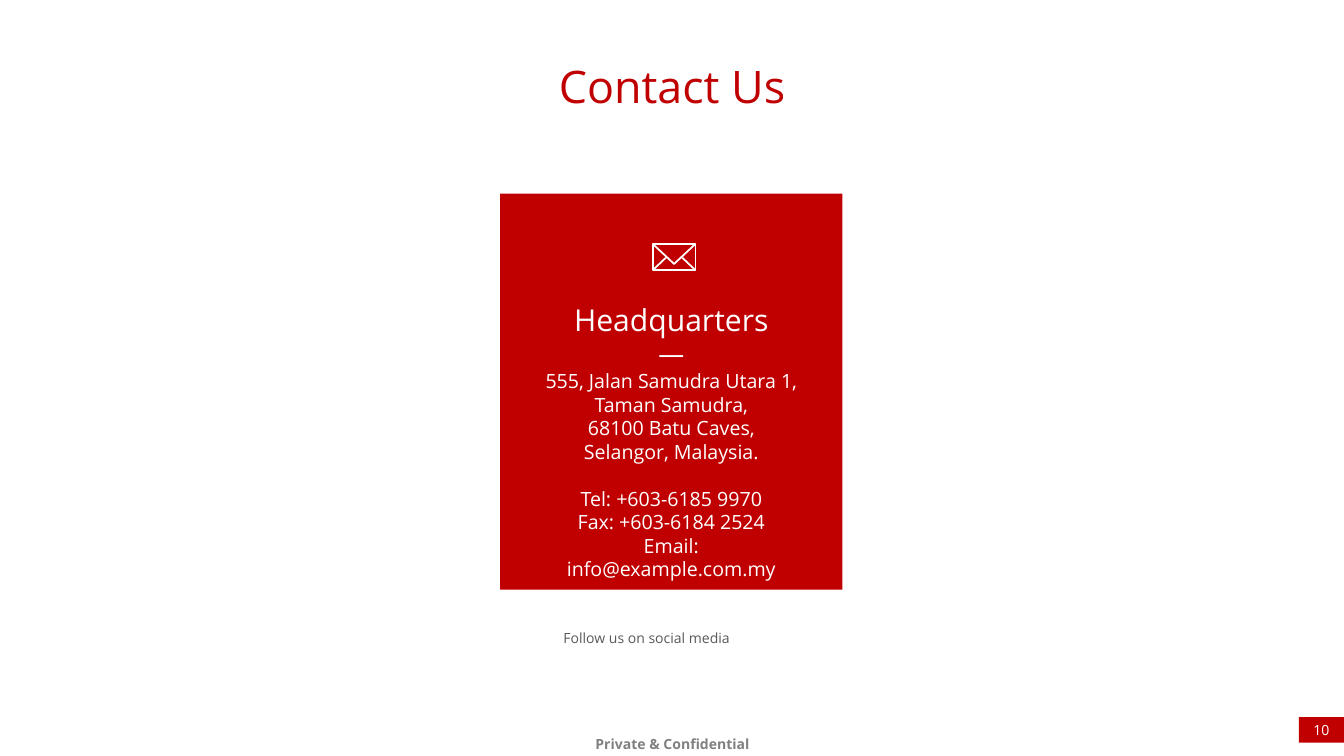
import dataclasses
import pptx
import pptx.util
import pptx.dml.color
import pptx.enum.shapes
import pptx.enum.text
import pptx.oxml.ns
import lxml.etree

Pt = pptx.util.Pt
Color = pptx.dml.color.RGBColor.from_string
Align = pptx.enum.text.PP_ALIGN
Anchor = pptx.enum.text.MSO_ANCHOR
Shape = pptx.enum.shapes.MSO_SHAPE


@dataclasses.dataclass(frozen=True)
class Theme:
    font: str = "Open Sans"
    red: str = "C00000"
    white: str = "FFFFFF"
    dark: str = "595959"
    gray: str = "808080"
    title: int = 64
    head: int = 43
    dash: int = 37
    body: int = 28
    small: int = 20
    stroke: float = 2.5


THEME = Theme()
ADDRESS = [
    "555, Jalan Samudra Utara 1,",
    "Taman Samudra,",
    "68100 Batu Caves,",
    "Selangor, Malaysia.",
]
CONTACT = [
    "Tel: +603-6185 9970",
    "Fax: +603-6184 2524",
    "Email: info@example.com.my",
]


def place(shape, box):
    shape.left, shape.top, shape.width, shape.height = map(Pt, box)


def write(shape, lines, color, inset=(0, 0), align=Align.CENTER, anchor=Anchor.TOP):
    """Fill a shape with (text, size) lines and return its paragraphs."""
    frame = shape.text_frame
    frame.word_wrap = True
    frame.auto_size = pptx.enum.text.MSO_AUTO_SIZE.NONE
    frame.vertical_anchor = anchor
    frame.margin_left = frame.margin_right = Pt(inset[0])
    frame.margin_top = frame.margin_bottom = Pt(inset[1])
    frame.text = "\n".join(text for text, size in lines)
    for para, (text, size) in zip(frame.paragraphs, lines):
        para.alignment = align
        para.font.name = THEME.font
        para.font.size = Pt(size)
        para.font.color.rgb = Color(color)
    return frame.paragraphs


def add_text(slide, box, lines, color, inset, align=Align.CENTER):
    shape = slide.shapes.add_textbox(*map(Pt, box))
    return write(shape, lines, color, inset, align)


def add_block(slide, box):
    shape = slide.shapes.add_shape(Shape.RECTANGLE, *map(Pt, box))
    shape.shadow.inherit = False
    shape.fill.solid()
    shape.fill.fore_color.rgb = Color(THEME.red)
    shape.line.fill.background()
    return shape


def add_title(slide, box):
    title = slide.shapes.title
    place(title, box)
    write(title, [("Contact Us", THEME.title)], THEME.red, (19, 9.5))


def outline(shape):
    shape.line.color.rgb = Color(THEME.white)
    shape.line.width = Pt(THEME.stroke)


def add_envelope(slide, box):
    left, top, width, height = box
    right, base, mid = left + width, top + height, left + width / 2
    frame = slide.shapes.add_shape(Shape.RECTANGLE, *map(Pt, box))
    pen = slide.shapes.build_freeform(Pt(left), Pt(top))
    pen.add_line_segments(
        [(Pt(mid), Pt(top + 0.76 * height)), (Pt(right), Pt(top))], close=False)
    for shape in (frame, pen.convert_to_shape()):
        shape.shadow.inherit = False
        shape.fill.background()
        outline(shape)
    for start, end in ((left, left + 0.31 * width), (right, right - 0.31 * width)):
        fold = slide.shapes.add_connector(
            pptx.enum.shapes.MSO_CONNECTOR.STRAIGHT,
            Pt(start), Pt(base), Pt(end), Pt(top + 0.52 * height))
        outline(fold)
        lxml.etree.SubElement(
            fold._element.spPr, pptx.oxml.ns.qn("a:effectLst"))


def add_card(slide, box):
    left, top, width, height = box
    add_block(slide, box)
    lines = [("Headquarters", THEME.head), ("—", THEME.dash)]
    lines += [(text, THEME.body) for text in ADDRESS + CONTACT]
    paras = add_text(slide, (left + 48, top + 147.5, width - 96, 383),
                     lines, THEME.white, (14.4, 7.2))
    paras[-len(CONTACT)].space_before = Pt(1.2 * THEME.body)
    add_envelope(slide, (left + 218, top + 72, 61, 37.5))


def add_social(slide, box):
    add_text(slide, box, [("Follow us on social media", THEME.small)],
             THEME.dark, (14.4, 7.2), Align.LEFT)


def add_footer(slide, box):
    para, = add_text(slide, box, [("Private & Confidential", THEME.small)],
                     THEME.gray, (17, 8.5))
    para.font.bold = True
    para.line_spacing = 1.2


def add_number(slide, box):
    write(add_block(slide, box), [("10", THEME.small)], THEME.white,
          anchor=Anchor.MIDDLE)


def main():
    deck = pptx.Presentation()
    deck.slide_width, deck.slide_height = Pt(1920), Pt(1080)
    slide = deck.slides.add_slide(deck.slide_layouts.get_by_name("Title Only"))
    add_title(slide, (110, 75, 1700, 97))
    add_card(slide, (714.5, 276.5, 489, 566))
    add_social(slide, (790.5, 891.5, 393, 39))
    add_footer(slide, (830, 1038, 261.5, 56))
    add_number(slide, (1855.5, 1024.5, 64.5, 36.5))
    deck.save("out.pptx")


if __name__ == "__main__":
    main()
